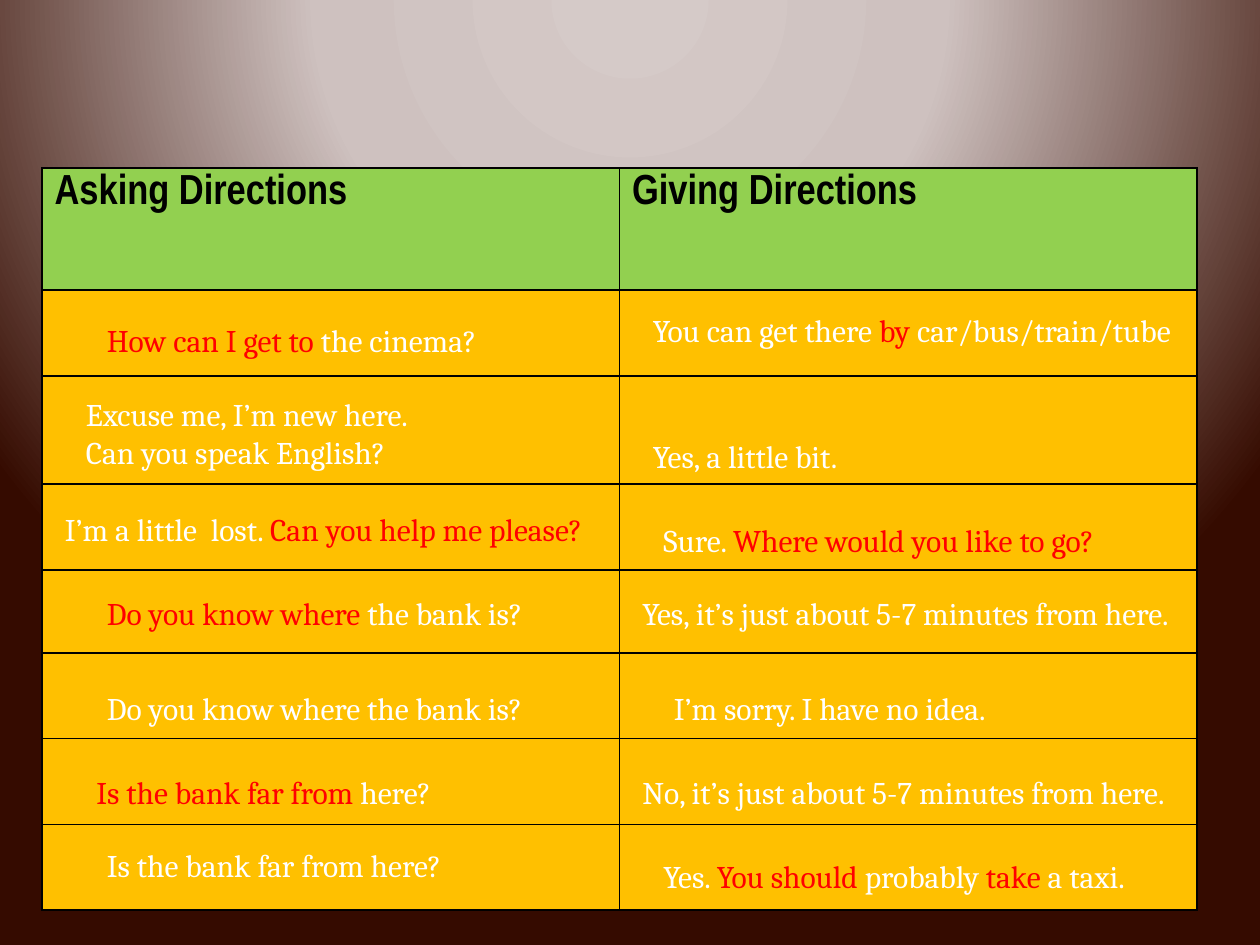
from pptx import Presentation
from pptx.dml.color import RGBColor
from pptx.enum.text import MSO_AUTO_SIZE
from pptx.oxml import parse_xml
from pptx.oxml.ns import nsdecls
from pptx.util import Inches, Pt

GROW = MSO_AUTO_SIZE.SHAPE_TO_FIT_TEXT
GREEN, AMBER, RED, WHITE, BLACK = "92D050", "FFC000", "FF0000", "FFFFFF", "000000"

# Content: asterisks enclose the key phrase of a sentence.
# Each phrase is (text, left, top, width); left and top are in grid steps of 1/12 inch.
HEADERS = ["Asking Directions", "Giving Directions"]
DIALOGUE = [
    (("*How can I get to *the cinema?", 9, 30, 3.33),
     ("You can get there *by *car/bus/train/tube", 61, 29, 4.6)),
    (("Excuse me, I’m new here. \nCan you speak English?", 7, 37, 3),
     ("Yes, a little bit.", 61, 41, 1.78)),
    (("I’m a little  lost. *Can you help me please?*", 5, 48, 4.59),
     ("Sure. *Where would you like to go?*", 62, 49, 3.87)),
    (("*Do you know where *the bank is?", 9, 56, 3.7),
     ("Yes, it’s just about 5-7 minutes from here.", 60, 56, 4.66)),
    (("Do you know where the bank is?", 9, 65, 3.7),
     ("I’m sorry. I have no idea.", 63, 65, 2.83)),
    (("*Is the bank far from *here?", 8, 73, 2.99),
     ("No, it’s just about 5-7 minutes from here.", 60, 73, 4.66)),
    (("Is the bank far from here?", 9, 80, 2.99),
     ("Yes. *You should *probably *take* a taxi.", 62, 81, 4.11)),
]
ROW_HEIGHTS = [0.97, 0.68, 0.86, 0.68, 0.66, 0.68, 0.68, 0.68]
TABLE_LEFT, TABLE_TOP, COLUMN_WIDTH = 4, 16, 55  # grid steps
GRADIENT = [(0, "D5CAC8"), (40, "CEC1BF"), (100, "350B00")]


def steps(count):
    return Inches(count / 12)


def style(span, size, font, color, bold=False):
    span.font.size = Pt(size)
    span.font.name = font
    span.font.bold = bold
    span.font.color.rgb = RGBColor.from_string(color)


def set_background(page):
    stops = "".join(f'<a:gs pos="{share * 1000}"><a:srgbClr val="{color}"/></a:gs>'
                    for share, color in GRADIENT)
    background = parse_xml(
        f'<p:bg {nsdecls("p", "a")}><p:bgPr><a:gradFill rotWithShape="1">'
        f'<a:gsLst>{stops}</a:gsLst><a:path path="circle">'
        '<a:fillToRect l="50000" t="-80000" r="50000" b="180000"/></a:path>'
        '</a:gradFill><a:effectLst/></p:bgPr></p:bg>')
    page.shapes._spTree.addprevious(background)


def paint_cell(cell, color):
    cell.fill.solid()
    cell.fill.fore_color.rgb = RGBColor.from_string(color)
    properties = cell._tc.get_or_add_tcPr()
    for index, side in enumerate(("lnL", "lnR", "lnT", "lnB")):
        properties.insert(index, parse_xml(
            f'<a:{side} {nsdecls("a")} w="{Pt(1)}"><a:solidFill>'
            f'<a:srgbClr val="{BLACK}"/></a:solidFill></a:{side}>'))


def add_phrase(page, text, left, top, width):
    lines = text.split("\n")
    box = page.shapes.add_textbox(steps(left), steps(top), Inches(width),
                                  Inches(0.09 + 0.31 * len(lines)))
    frame = box.text_frame
    frame.word_wrap = False
    frame.auto_size = GROW
    para = frame.paragraphs[0]
    for number, line in enumerate(lines):
        if number:
            para.add_line_break()
        for index, part in enumerate(line.split("*")):
            if part:
                span = para.add_run()
                span.text = part
                style(span, 18, "Cambria", RED if index % 2 else WHITE)


deck = Presentation()
deck.slide_width, deck.slide_height = Inches(10), Inches(7.5)
page = deck.slides.add_slide(deck.slide_layouts[6])
set_background(page)

# Table: green header row above amber rows
table = page.shapes.add_table(
    len(ROW_HEIGHTS), len(HEADERS), steps(TABLE_LEFT), steps(TABLE_TOP),
    steps(COLUMN_WIDTH * len(HEADERS)), Inches(sum(ROW_HEIGHTS))).table
for column in table.columns:
    column.width = steps(COLUMN_WIDTH)
for number, (row, height) in enumerate(zip(table.rows, ROW_HEIGHTS)):
    row.height = Inches(height)
    for cell in row.cells:
        paint_cell(cell, AMBER if number else GREEN)
for cell, header in zip(table.rows[0].cells, HEADERS):
    cell.text_frame.text = header
    style(cell.text_frame.paragraphs[0].runs[0], 24, "Arial Narrow", BLACK, bold=True)

# Phrases over the table rows
for exchange in DIALOGUE:
    for phrase in exchange:
        add_phrase(page, *phrase)

deck.save("out.pptx")
